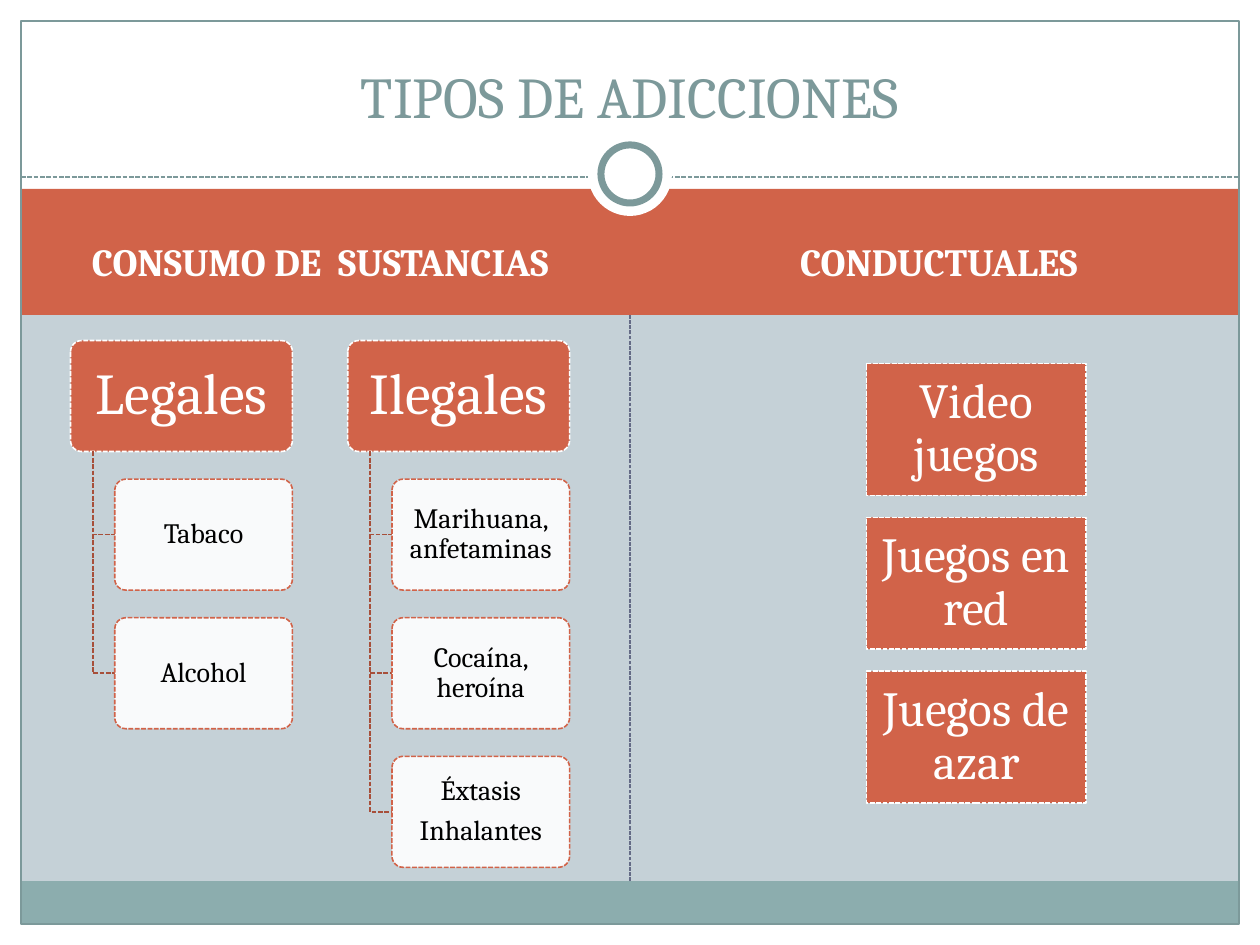
"""Build the slide on types of addiction."""
from lxml.etree import SubElement
from pptx import Presentation
from pptx.dml.color import RGBColor
from pptx.enum.dml import MSO_LINE as Dash
from pptx.enum.shapes import MSO_CONNECTOR as Link, MSO_SHAPE as Kind
from pptx.enum.text import MSO_ANCHOR as Anchor, PP_ALIGN as Align
from pptx.oxml.ns import qn
from pptx.util import Pt

RED, TEAL, WHITE = "D16349", "7C999A", "FFFFFF"


def paint(part, fill=None, edge=None, width=0.9, dash=None):
    if part in links:
        SubElement(part.element.spPr, qn("a:effectLst"))
    else:
        part.shadow.inherit = False
        part.fill.background()
    if fill:
        part.fill.solid()
        part.fill.fore_color.rgb = RGBColor.from_string(fill)
    if edge:
        part.line.color.rgb = RGBColor.from_string(edge)
        part.line.width = Pt(width)
        part.line.dash_style = dash
    else:
        part.line.fill.background()


def write(part, text, size, color, pad=(7.2, 3.6), anchor=Anchor.MIDDLE, bold=False, lead=1, after=0):
    frame = part.text_frame
    frame.text = text
    side, top = map(Pt, pad)
    form = {"word_wrap": True, "vertical_anchor": anchor, "margin_left": side,
            "margin_right": side, "margin_top": top, "margin_bottom": top}
    for key, val in form.items():
        setattr(frame, key, val)
    for para in frame.paragraphs:
        form = {"alignment": Align.CENTER, "line_spacing": lead,
                "space_before": Pt(0), "space_after": Pt(after)}
        for key, val in form.items():
            setattr(para, key, val)
        for key, val in {"name": "Cambria", "size": Pt(size), "bold": bold}.items():
            setattr(para.font, key, val)
        para.font.color.rgb = RGBColor.from_string(color)


deck = Presentation()
deck.slide_width, deck.slide_height = Pt(720), Pt(540)
slide = deck.slides.add_slide(deck.slide_layouts[5])
slide.background.fill.solid()
slide.background.fill.fore_color.rgb = RGBColor.from_string("C5D1D7")
shapes = slide.shapes
links = []

for box in [(0, 0, 720, 113.76), (0, 528, 720, 12), (0, 0, 12, 540), (708, 0, 12, 540)]:
    paint(shapes.add_shape(Kind.RECTANGLE, *map(Pt, box)), WHITE)
band = shapes.add_shape(Kind.RECTANGLE, *map(Pt, (12, 108, 696, 72)))
paint(band, RED)
foot = shapes.add_shape(Kind.RECTANGLE, *map(Pt, (12, 503.5, 696, 24.5)))
paint(foot, "8CADAE")

split = shapes.add_connector(Link.STRAIGHT, *map(Pt, (360, 503.5, 360, 180)))
split.begin_connect(foot, 0)
split.end_connect(band, 2)
rule = shapes.add_connector(Link.STRAIGHT, *map(Pt, (12, 101, 708, 101)))
links += [split, rule]
paint(split, edge="646B86", width=0.75, dash=Dash.SQUARE_DOT)
paint(rule, edge=TEAL, dash=Dash.SQUARE_DOT)

border = shapes.add_shape(Kind.RECTANGLE, *map(Pt, (12, 12, 696, 516)))
paint(border, edge=TEAL, width=0.75)
for size, edge in [(48, None), (33.2, TEAL)]:
    disc = shapes.add_shape(Kind.OVAL, *map(Pt, (360 - size / 2, 99.4 - size / 2, size, size)))
    paint(disc, WHITE, edge, 4)

for left, text in [(24, "CONSUMO DE  SUSTANCIAS"), (377.5, "CONDUCTUALES")]:
    head = shapes.add_textbox(*map(Pt, (left, 120.5, 318, 57.6)))
    write(head, text, 22, WHITE, bold=True)

trees = [("Legales", ["Tabaco", "Alcohol"]),
         ("Ilegales", ["Marihuana, anfetaminas", "Cocaína, heroína", "Éxtasis\nInhalantes"])]
top, high, step = 194.6, 63.4, 79.2
for col, (name, kids) in enumerate(trees):
    left = 40.3 + 158.4 * col
    root = shapes.add_shape(Kind.ROUNDED_RECTANGLE, *map(Pt, (left, top, 126.8, high)))
    root.adjustments[0] = 0.1
    paint(root, RED, WHITE, dash=Dash.SQUARE_DOT)
    write(root, name, 33, WHITE, (5, 3.3), lead=0.9)
    for row, text in enumerate(kids, 1):
        y = top + step * row
        mid, stem, x = y + high / 2, left + 12.7, left + 25.3
        path = shapes.build_freeform(Pt(stem), Pt(top + high))
        path.add_line_segments([(Pt(stem), Pt(mid)), (Pt(x), Pt(mid))], close=False)
        paint(path.convert_to_shape(), edge="A74F3A", dash=Dash.SQUARE_DOT)
        leaf = shapes.add_shape(Kind.ROUNDED_RECTANGLE, *map(Pt, (x, y, 101.5, high)))
        leaf.adjustments[0] = 0.1
        paint(leaf, WHITE, RED, dash=Dash.SQUARE_DOT)
        tint = leaf.element.spPr.find(qn("a:solidFill"))[0]
        SubElement(tint, qn("a:alpha"), val="90000")
        write(leaf, text, 16, "000000", (2.4, 1.6), lead=0.9, after=5.6)

for row, text in enumerate(["Video juegos", "Juegos en red", "Juegos de azar"]):
    game = shapes.add_shape(Kind.RECTANGLE, *map(Pt, (495.2, 207.8 + 87.9 * row, 125.4, 75.3)))
    paint(game, RED, WHITE, dash=Dash.SQUARE_DOT)
    write(game, text, 28, WHITE, (8.4, 8.4), lead=0.9)

title = shapes.title
form = {"left": 24, "top": 18, "width": 672, "height": 59.8}
for key, val in form.items():
    setattr(title, key, Pt(val))
write(title, "TIPOS DE ADICCIONES", 33, TEAL, anchor=Anchor.BOTTOM)
title.element.getparent().append(title.element)

deck.save("out.pptx")
